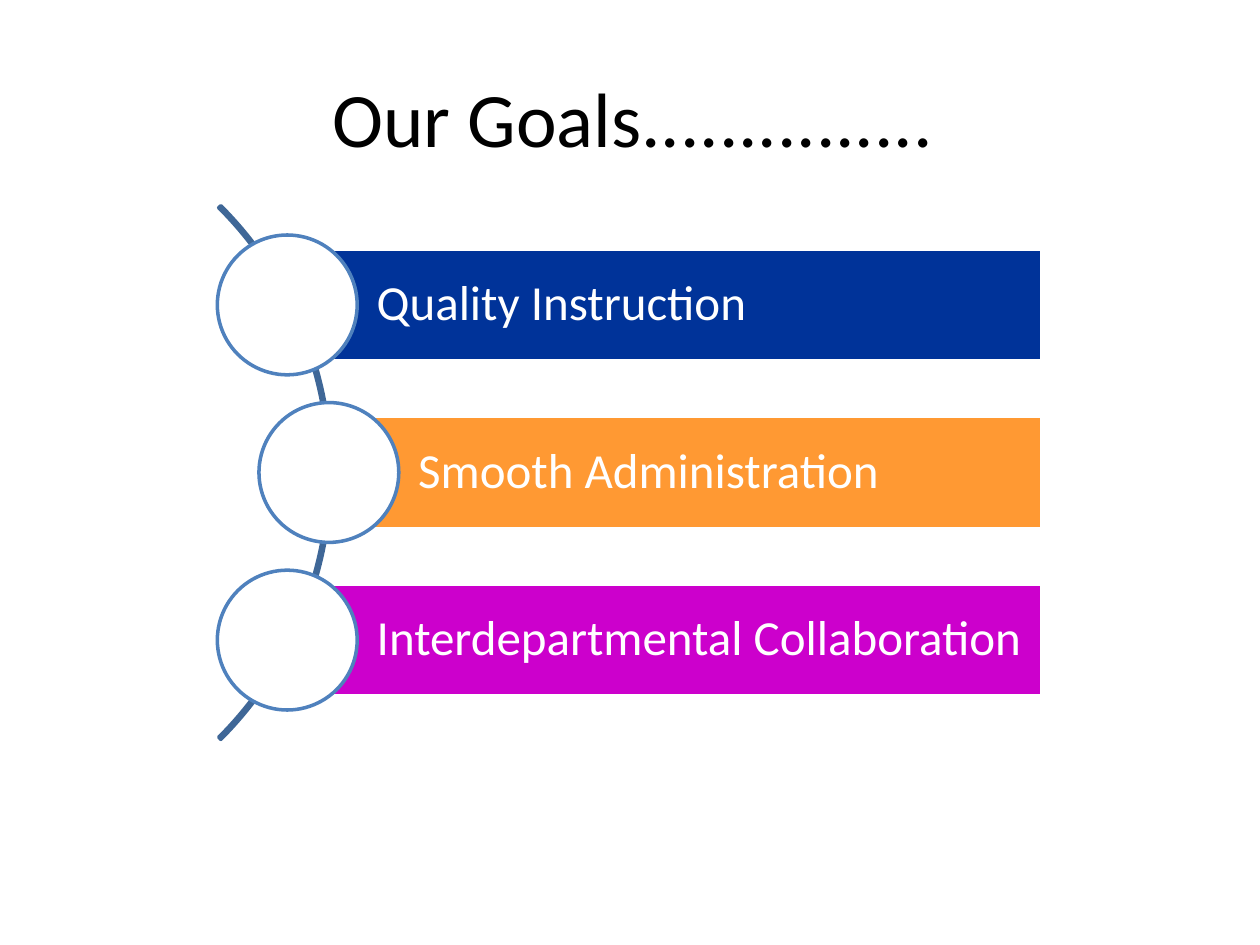
import pptx
import pptx.dml.color
import pptx.enum.shapes
import pptx.enum.text
import pptx.util

inches = pptx.util.Inches
shapes = pptx.enum.shapes.MSO_SHAPE
align = pptx.enum.text.PP_ALIGN
WIDTH, HEIGHT = 10, 7.5


def color(hex_text):
    return pptx.dml.color.RGBColor.from_string(hex_text)


def write(box, text, size, hex_text, alignment, left, other):
    frame = box.text_frame
    frame_format = {
        "word_wrap": True,
        "vertical_anchor": pptx.enum.text.MSO_ANCHOR.MIDDLE,
        "margin_left": inches(left),
        "margin_right": inches(other),
        "margin_top": inches(other),
        "margin_bottom": inches(other),
    }
    for name, value in frame_format.items():
        setattr(frame, name, value)
    para = frame.paragraphs[0]
    para.alignment = alignment
    span = para.add_run()
    span.text = text
    for name, value in {"name": "Calibri", "size": pptx.util.Pt(size)}.items():
        setattr(span.font, name, value)
    span.font.color.rgb = color(hex_text)
    return para


deck = pptx.Presentation()
deck.slide_width, deck.slide_height = inches(WIDTH), inches(HEIGHT)
page = deck.slides.add_slide(deck.slide_layouts[6])

# Title across the slide, inside a 5% side margin
title = page.shapes.add_textbox(
    inches(0.05 * WIDTH), inches(0.04 * HEIGHT), inches(0.9 * WIDTH), inches(1.25)
)
write(title, "Our Goals...............", 44, "000000", align.CENTER, 0.1, 0.05)

# Three rows centred on the slide's height; the middle one sits further right
middle = HEIGHT / 2
row_step, bar_height, circle_size, arc_size = 1.33, 0.89, 1.11, 5.99
bar_right = 8.27
goals = [
    ("Quality Instruction", "003399", 2.28),
    ("Smooth Administration", "FF9933", 2.61),
    ("Interdepartmental Collaboration", "CC00CC", 2.28),
]

# Each part: preset, left, top, width, height, fill, line, text
parts = [(shapes.BLOCK_ARC, -3.36, middle - arc_size / 2, arc_size, arc_size,
          None, "3F6797", None)]
for row, (goal, fill, left) in enumerate(goals):
    center = middle + (row - 1) * row_step
    parts.append((shapes.RECTANGLE, left, center - bar_height / 2,
                  bar_right - left, bar_height, fill, "FFFFFF", goal))
    parts.append((shapes.OVAL, left - circle_size / 2, center - circle_size / 2,
                  circle_size, circle_size, "FFFFFF", "4F81BD", None))

# Arc, bars and circles, from back to front
for preset, left, top, width, height, fill, line, text in parts:
    shape = page.shapes.add_shape(
        preset, inches(left), inches(top), inches(width), inches(height)
    )
    shape.shadow.inherit = False
    if fill:
        shape.fill.solid()
        shape.fill.fore_color.rgb = color(fill)
    else:
        shape.fill.background()
    shape.line.color.rgb = color(line)
    shape.line.width = pptx.util.Pt(2)
    if preset == shapes.BLOCK_ARC:
        # Quarter turn from 315 to 45 degrees, with a hairline thickness
        for index, value in enumerate((189, 27, 0.004)):
            shape.adjustments[index] = value
    if text:
        para = write(shape, text, 28, "FFFFFF", align.LEFT, 0.71, 0.08)
        para.line_spacing = 0.9

deck.save("out.pptx")
